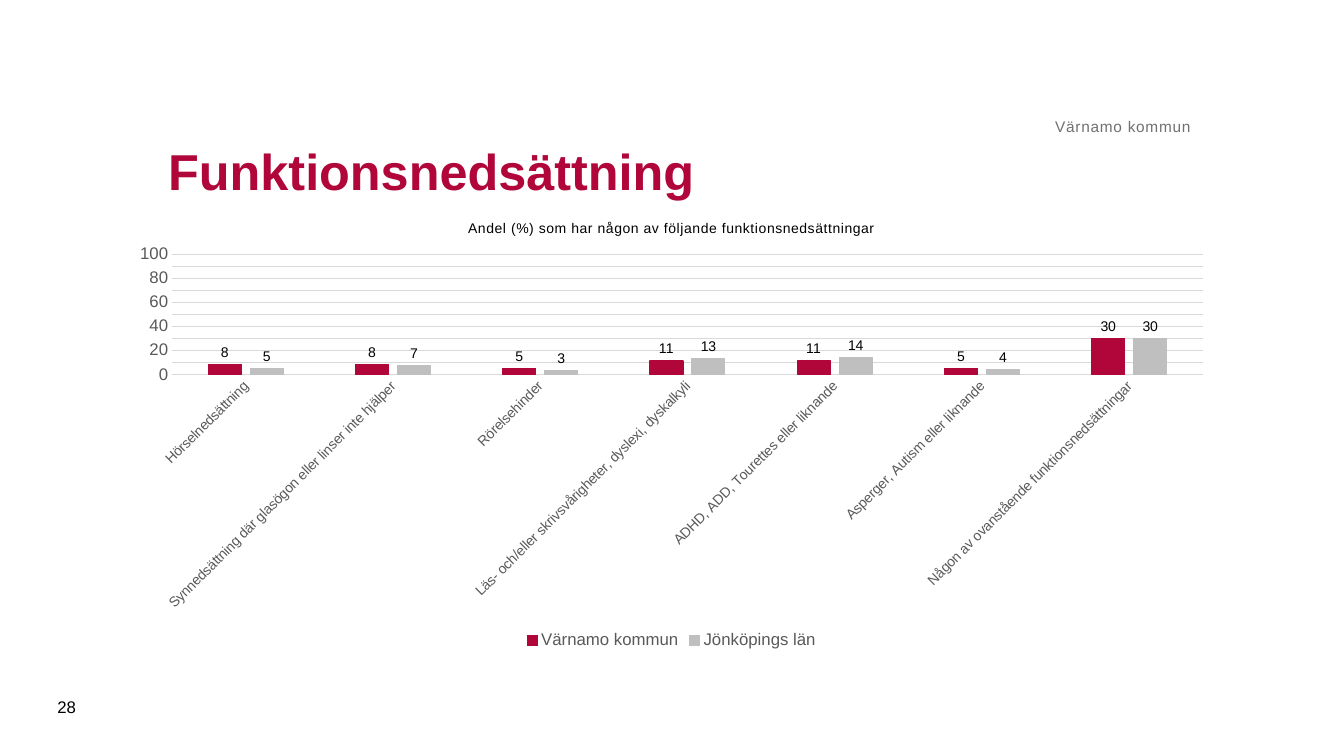
"""Build the Funktionsnedsättning slide with its clustered column chart."""
from dataclasses import dataclass

from pptx import Presentation
from pptx import util as u
from pptx.chart import data
from pptx.dml import color
from pptx.enum import chart as kinds
from pptx.enum import text

FONT = "Arial"
CRIMSON, SILVER, BLACK = "B1063A", "BFBFBF", "000000"
DARK_GREY, MID_GREY, GRID_GREY = "595959", "717171", "D9D9D9"
NUMBER_FORMAT = "#,##0;#,##0"
CATEGORIES = [
    "Hörselnedsättning",
    "Synnedsättning där glasögon eller linser inte hjälper",
    "Rörelsehinder",
    "Läs- och/eller skrivsvårigheter, dyslexi, dyskalkyli",
    "ADHD, ADD, Tourettes eller liknande",
    "Asperger, Autism eller liknande",
    "Någon av ovanstående funktionsnedsättningar",
]


@dataclass
class Area:
    name: str
    shares: tuple
    fill: str


AREAS = [
    Area("Värnamo kommun", (8, 8, 5, 11, 11, 5, 30), CRIMSON),
    Area("Jönköpings län", (5, 7, 3, 13, 14, 4, 30), SILVER),
]


def rgb(value: str) -> color.RGBColor:
    return color.RGBColor.from_string(value)


def style_font(font, size: float, tint: str, bold: bool = False) -> None:
    font.name, font.size, font.bold = FONT, u.Pt(size), bold
    font.color.rgb = rgb(tint)


def style_line(line, tint: str) -> None:
    line.color.rgb = rgb(tint)
    line.width = u.Pt(0.75)


def set_spacing(span, points: float) -> None:
    span.font._element.set("spc", str(round(points * 100)))


def add_text(page, words: str, left: float, top: float, width: float, height: float, *,
             size: float, tint: str, bold: bool = False, spacing: float = 0,
             anchor=text.MSO_ANCHOR.MIDDLE, align=text.PP_ALIGN.LEFT, inset: bool = True) -> None:
    box = page.shapes.add_textbox(*map(u.Inches, (left, top, width, height)))
    frame = box.text_frame
    frame.word_wrap, frame.vertical_anchor = True, anchor
    if not inset:
        frame.margin_left = frame.margin_right = frame.margin_top = frame.margin_bottom = 0
    para = frame.paragraphs[0]
    para.alignment = align
    span = para.add_run()
    span.text = words
    style_font(span.font, size, tint, bold)
    if spacing:
        set_spacing(span, spacing)


def style_axes(chart) -> None:
    names, values = chart.category_axis, chart.value_axis
    for axis, size in ((names, 10), (values, 12)):
        axis.major_tick_mark = axis.minor_tick_mark = kinds.XL_TICK_MARK.NONE
        style_font(axis.tick_labels.font, size, DARK_GREY)
    style_line(names.format.line, GRID_GREY)
    names._element.txPr.bodyPr.set("rot", str(-45 * 60000))
    values.minimum_scale, values.maximum_scale, values.major_unit = 0, 100, 10
    values.format.line.fill.background()
    style_line(values.major_gridlines.format.line, GRID_GREY)
    values.tick_labels.number_format = NUMBER_FORMAT
    values.tick_labels.number_format_is_linked = False


def style_series(series, area: Area) -> None:
    series.format.fill.solid()
    series.format.fill.fore_color.rgb = rgb(area.fill)
    style_line(series.format.line, area.fill)
    labels = series.data_labels
    labels.show_value = True
    labels.position = kinds.XL_LABEL_POSITION.OUTSIDE_END
    labels.number_format, labels.number_format_is_linked = NUMBER_FORMAT, False
    style_font(labels.font, 10, BLACK)


def add_share_chart(page) -> None:
    shares = data.CategoryChartData()
    shares.categories = CATEGORIES
    for area in AREAS:
        shares.add_series(area.name, area.shares)
    place = map(u.Inches, (1.17, 2.01, 10.98, 4.47))
    chart = page.shapes.add_chart(kinds.XL_CHART_TYPE.COLUMN_CLUSTERED, *place, shares).chart
    style_font(chart.font, 10, BLACK)
    para = chart.chart_title.text_frame.paragraphs[0]
    span = para.add_run()
    span.text = "Andel (%) som har någon av följande funktionsnedsättningar"
    style_font(span.font, 10, BLACK)
    set_spacing(span, 0.5)
    chart.has_legend = True
    chart.legend.position = kinds.XL_LEGEND_POSITION.BOTTOM
    chart.legend.include_in_layout = False
    style_font(chart.legend.font, 12, DARK_GREY)
    style_axes(chart)
    plot = chart.plots[0]
    plot.gap_width, plot.overlap, plot.vary_by_categories = 219, -27, False
    for series, area in zip(plot.series, AREAS):
        style_series(series, area)


def main() -> None:
    deck = Presentation()
    deck.slide_width, deck.slide_height = u.Inches(13.33), u.Inches(7.5)
    page = deck.slides.add_slide(deck.slide_layouts[6])
    add_text(page, "Funktionsnedsättning", 1.57, 0.98, 10.24, 1.42,
             size=36, tint=CRIMSON, bold=True)
    add_text(page, "Värnamo kommun", 1.57, 0.62, 10.24, 0.73, size=11, tint=MID_GREY, spacing=0.5,
             anchor=text.MSO_ANCHOR.BOTTOM, align=text.PP_ALIGN.RIGHT, inset=False)
    add_text(page, "28", 0.47, 6.81, 0.57, 0.4, size=12, tint=BLACK)
    add_share_chart(page)
    deck.save("out.pptx")


if __name__ == "__main__":
    main()
